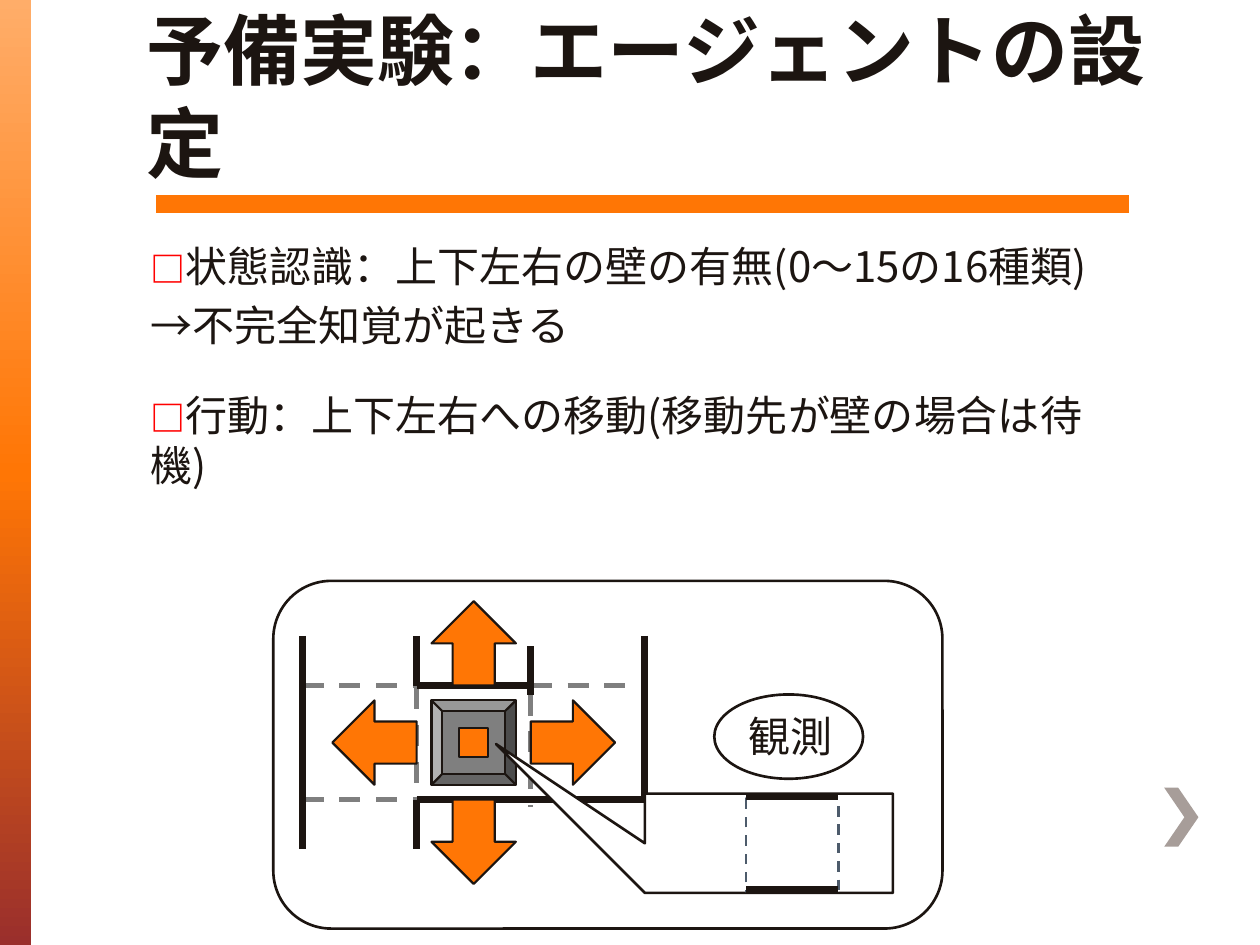
"""Build the slide on the agent settings of a preliminary experiment."""
from copy import deepcopy
from math import cos, pi, sin

from pptx import Presentation
from pptx import util as u
from pptx.dml import color
from pptx.enum import dml, shapes, text
from pptx.oxml import ns, xmlchemy

Cm, Pt = u.Cm, u.Pt
KIND = shapes.MSO_SHAPE
INK, ORANGE, GREY, SLATE = "1C1511", "FF7605", "7F7F7F", "4D5B6B"
CJK = "Noto Sans CJK JP"


def rgb(code):
    """Turn a hex string into a colour."""
    return color.RGBColor.from_string(code)


def put(obj, vals):
    """Set every attribute named in a dict of format values."""
    for key, val in vals.items():
        setattr(obj, key, val)


class Deck:
    """Hold the style and the current slide."""

    def __init__(self, wide, high):
        """Start a deck with one title-only slide."""
        self.prs = Presentation()
        put(self.prs, {"slide_width": Cm(wide), "slide_height": Cm(high)})
        self.slide = self.prs.slides.add_slide(self.prs.slide_layouts[5])
        self.items = self.slide.shapes

    def pen(self, line, hue, width, dash=False):
        """Style a line or an outline."""
        line.color.rgb = rgb(hue)
        line.width = Pt(width)
        if dash:
            line.dash_style = dml.MSO_LINE.DASH

    def paint(self, shape, fill, hue, width, dash):
        """Style the fill and outline of a shape."""
        shape.shadow.inherit = False
        if fill:
            shape.fill.solid()
            shape.fill.fore_color.rgb = rgb(fill)
        else:
            shape.fill.background()
        if hue:
            self.pen(shape.line, hue, width, dash)
        else:
            shape.line.fill.background()
        return shape

    def shape(self, kind, box, fill=None, hue=INK, width=1.25, dash=False):
        """Add a preset shape."""
        item = self.items.add_shape(kind, *map(Cm, box))
        return self.paint(item, fill, hue, width, dash)

    def outline(self, pts, fill, width):
        """Add a closed outline through points."""
        form = self.items.build_freeform(*pts[0], scale=Cm(1))
        form.add_line_segments(pts[1:], close=True)
        return self.paint(form.convert_to_shape(), fill, INK, width, False)

    def line(self, x1, y1, x2, y2, hue=INK, width=4, dash=False):
        """Add a straight line."""
        item = self.items.add_connector(
            shapes.MSO_CONNECTOR.STRAIGHT, *map(Cm, (x1, y1, x2, y2)))
        self.pen(item.line, hue, width, dash)
        item._element.spPr.append(xmlchemy.OxmlElement("a:effectLst"))

    def fade(self, box, stops):
        """Add a bar with a downward gradient."""
        bar = self.shape(KIND.RECTANGLE, box, hue=None)
        bar.fill.gradient()
        bar.fill.gradient_angle = 270
        group = bar.fill._fill._gradFill.find(ns.qn("a:gsLst"))
        group.append(deepcopy(group[-1]))
        for stop, (pos, hue) in zip(bar.fill.gradient_stops, stops):
            stop.position = pos
            stop.color.rgb = rgb(hue)

    def run(self, para, words, size, name, hue=INK, bold=False):
        """Add a run of text."""
        run = para.add_run()
        run.text = words
        put(run.font, {"size": Pt(size), "bold": bold, "name": name})
        run.font.color.rgb = rgb(hue)
        east = xmlchemy.OxmlElement("a:ea")
        east.set("typeface", CJK)
        run.font._element.find(ns.qn("a:latin")).addnext(east)

    def title(self, box, words):
        """Place and fill the title."""
        item = self.items.title
        put(item, dict(zip(("left", "top", "width", "height"), map(Cm, box))))
        put(item.text_frame, {"word_wrap": True,
                              "auto_size": text.MSO_AUTO_SIZE.NONE,
                              "vertical_anchor": text.MSO_ANCHOR.BOTTOM})
        para = item.text_frame.paragraphs[0]
        put(para, {"alignment": text.PP_ALIGN.LEFT, "line_spacing": Pt(53)})
        self.run(para, words, 44, "Calibri", bold=True)

    def body(self, box, paras):
        """Add paragraphs, some with a red box mark."""
        frame = self.items.add_textbox(*map(Cm, box)).text_frame
        frame.word_wrap = True
        for num, (mark, words, gap) in enumerate(paras):
            para = frame.add_paragraph() if num else frame.paragraphs[0]
            put(para, {"space_before": Pt(gap), "line_spacing": Pt(29)})
            if mark:
                self.run(para, mark, 20, CJK, "FF0000", True)
            self.run(para, words, 24, CJK)

    def label(self, box, words):
        """Add a short centred label."""
        frame = self.items.add_textbox(*map(Cm, box)).text_frame
        put(frame, {"word_wrap": False,
                    "vertical_anchor": text.MSO_ANCHOR.MIDDLE})
        frame.paragraphs[0].alignment = text.PP_ALIGN.CENTER
        self.run(frame.paragraphs[0], words, 24, "Arial")


def maze(deck):
    """Draw the walls, open borders, agent and its moves."""
    a, b, c, d = (6.1 + 2.3 * i for i in range(4))
    top, bot = 13.82, 16.12
    for ends in ((b, 13.13, b, bot), (c, 13.26, c, 16.26), (a, bot, b, bot),
                 (a, top, b, top), (c, top, d, top)):
        deck.line(*ends, hue=GREY, width=3, dash=True)
    for ends in ((b, top, c, top), (d, 12.82, d, bot), (a, 12.82, a, 17.12),
                 (b, bot, d, bot), (b, 12.82, b, top), (b, bot, b, 17.12),
                 (c, 13.03, c, 14.02)):
        deck.line(*ends)
    size, step = 1.7, 2
    left, high = (b + c - size) / 2, (top + bot - size) / 2
    for kind, dx, dy in ((KIND.LEFT_ARROW, -1, 0), (KIND.RIGHT_ARROW, 1, 0),
                         (KIND.UP_ARROW, 0, -1), (KIND.DOWN_ARROW, 0, 1)):
        box = (left + dx * step, high + dy * step, size, size)
        deck.shape(kind, box, ORANGE)
    deck.shape(KIND.BEVEL, (left, high, size, size), GREY)
    deck.shape(KIND.RECTANGLE, (left + 0.56, high + 0.56, 0.58, 0.58), ORANGE)


def view(deck):
    """Draw the callout with what the agent observes."""
    x1, y1, x2, y2, rad = 13.41, 15.75, 18.4, 18.26, 0.42
    mids = ((x1 + rad, y1 + rad), (x2 - rad, y1 + rad),
            (x2 - rad, y2 - rad), (x1 + rad, y2 - rad))
    pts = [(x + rad * cos(t), y + rad * sin(t))
           for i, (x, y) in enumerate(mids)
           for t in (pi + (i + k / 8) * pi / 2 for k in range(9))]
    deck.outline(pts + [(9.88, 15.11), (x1, 16.87)], "FFFFFF", 1.5)
    left, right = 15.04, 16.9
    deck.shape(KIND.RECTANGLE, (left, 16.1, 1.87, 1.87), "FFFFFF",
               SLATE, 1.5, True)
    for y in (16.05, 17.93):
        deck.line(left, y, right, y)
    deck.label((14.81, 14.2, 2.24, 1.27), "観測")
    deck.shape(KIND.OVAL, (14.4, 14, 3, 1.7), width=1.5)


def main():
    """Build and save the slide."""
    deck = Deck(25.4, 19.05)
    deck.fade((0, 0, 0.63, 19.05),
              ((0, "FFAD69"), (0.5, ORANGE), (1, "9A2F2C")))
    mark = deck.shape(KIND.CHEVRON, (23.47, 15.88, 0.69, 1.19), "A79D99", None)
    mark.adjustments[0] = 0.59
    deck.title((2.69, 0.74, 22.2, 3.17), "予備実験：エージェントの設定")
    deck.body((2.79, 4.72, 20, 6.32), (
        ("□", "状態認識：上下左右の壁の有無(0～15の16種類)", 4.8),
        ("", "→不完全知覚が起きる", 4.8),
        ("□", "行動：上下左右への移動(移動先が壁の場合は待機)", 22)))
    deck.line(3.15, 4.11, 22.75, 4.11, ORANGE, 10)
    maze(deck)
    view(deck)
    deck.shape(KIND.ROUNDED_RECTANGLE, (5.51, 11.71, 13.49, 7.01), width=1.5)
    deck.prs.save("out.pptx")


if __name__ == "__main__":
    main()
